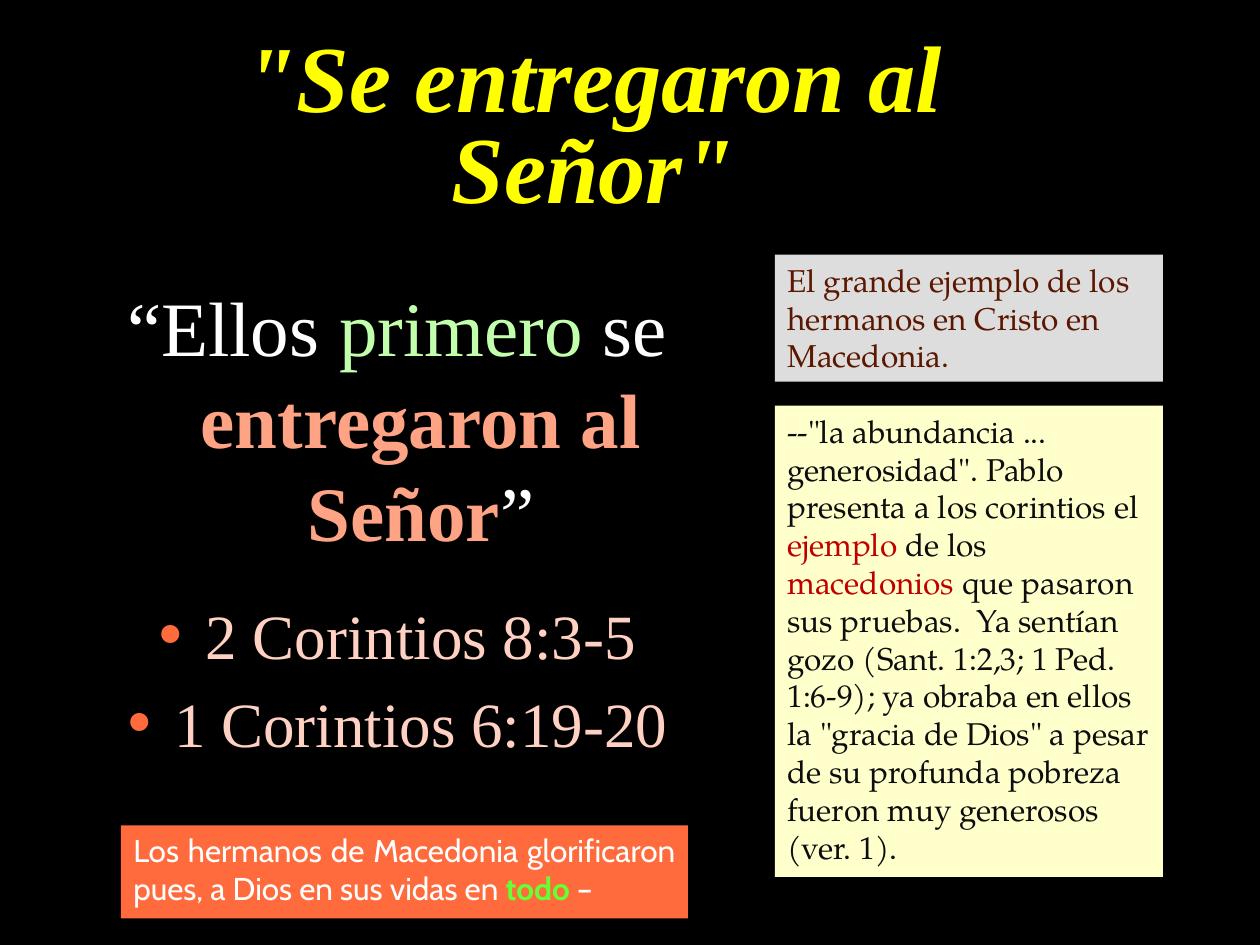
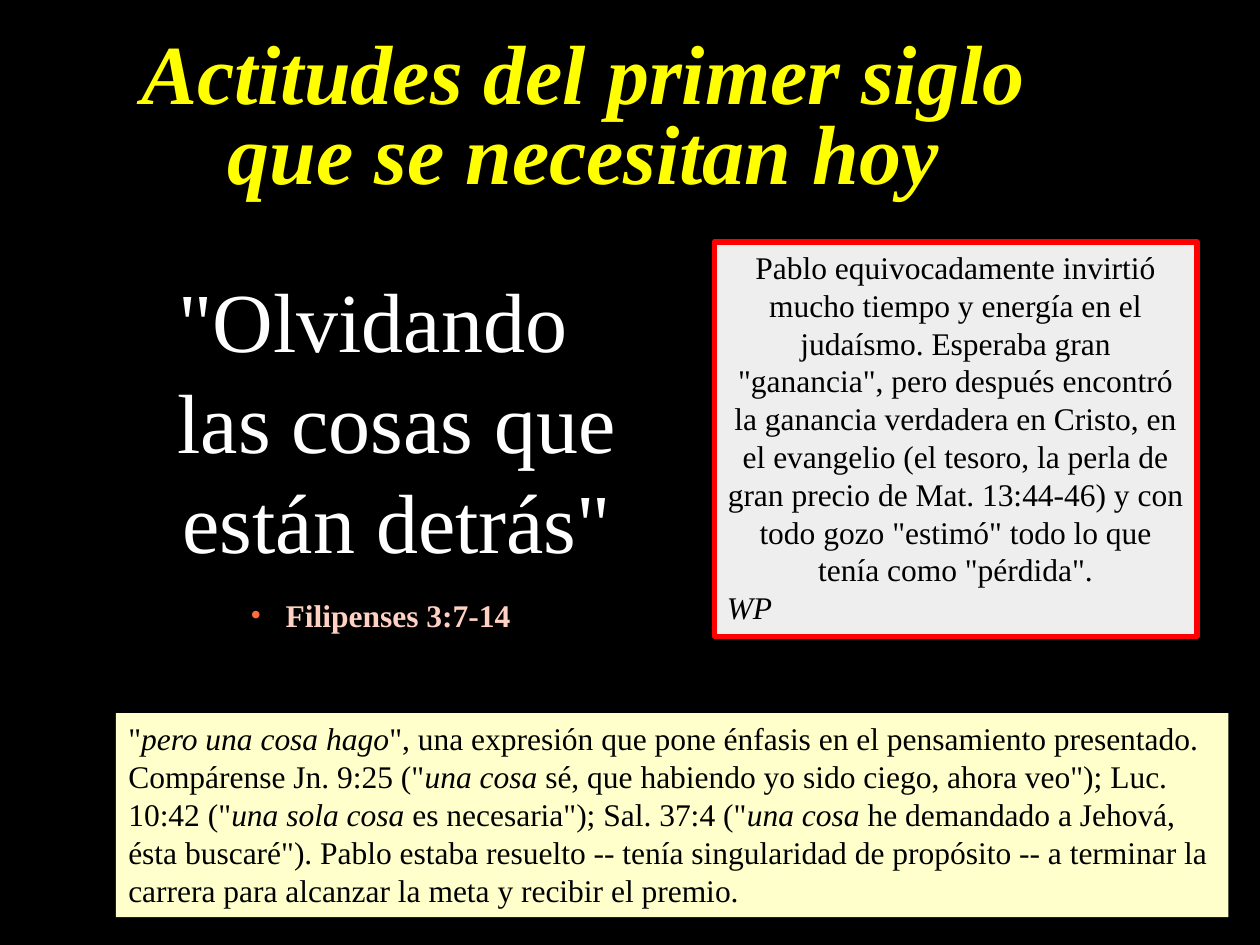
from lxml import etree
from pptx import Presentation
from pptx.dml.color import RGBColor
from pptx.enum.shapes import MSO_SHAPE
from pptx.enum.text import MSO_ANCHOR, PP_ALIGN
from pptx.oxml import parse_xml
from pptx.oxml.ns import nsdecls, qn
from pptx.util import Inches, Pt

BLACK = RGBColor(0x00, 0x00, 0x00)
WHITE = RGBColor(0xFF, 0xFF, 0xFF)
YELLOW = RGBColor(0xFF, 0xFF, 0x00)
CREAM = RGBColor(0xFF, 0xFF, 0xCC)
SILVER = RGBColor(0xDD, 0xDD, 0xDD)
PALE_GRAY = RGBColor(0xEE, 0xEE, 0xEE)
ORANGE = RGBColor(0xFF, 0x6B, 0x3C)
SALMON = RGBColor(0xFF, 0xA3, 0x85)
PINK = RGBColor(0xFF, 0xD1, 0xC2)
MINT = RGBColor(0xC2, 0xFF, 0xAD)
GREEN = RGBColor(0x66, 0xFF, 0x33)
BROWN = RGBColor(0x5C, 0x17, 0x00)
INK = RGBColor(0x0D, 0x0D, 0x0D)
DARK_RED = RGBColor(0xC0, 0x00, 0x00)
RED = RGBColor(0xFF, 0x00, 0x00)

SERIF, PAGELLA, CABIN = "Times New Roman", "TeX Gyre Pagella", "Cabin"
LEFT, CENTER, JUSTIFY = PP_ALIGN.LEFT, PP_ALIGN.CENTER, PP_ALIGN.JUSTIFY


def add_text(s, box, paragraphs, size, color, font=SERIF, align=LEFT, fill=None):
    """Add a text box, or a filled rectangle; each run is (text, color, style), style from 'b' and 'i'."""
    place = [Inches(n) for n in box]
    if fill is None:
        sp = s.shapes.add_textbox(*place)
    else:
        sp = s.shapes.add_shape(MSO_SHAPE.RECTANGLE, *place)
        sp.shadow.inherit = False
        sp.fill.solid()
        sp.fill.fore_color.rgb = fill
        sp.line.fill.background()
    tf = sp.text_frame
    tf.word_wrap = True
    tf.vertical_anchor = MSO_ANCHOR.TOP
    for i, runs in enumerate(paragraphs):
        p = tf.paragraphs[0] if i == 0 else tf.add_paragraph()
        p.alignment = align
        for text, run_color, style in runs:
            r = p.add_run()
            r.text = text
            r.font.name = font
            r.font.size = Pt(size)
            r.font.color.rgb = run_color or color
            r.font.bold = "b" in style
            r.font.italic = "i" in style
    return sp


def indent(p, hang, bullet_percent=None):
    pPr = p._p.get_or_add_pPr()
    pPr.set("marL", str(Inches(hang)))
    pPr.set("indent", str(-Inches(hang)))
    if bullet_percent:
        clr = etree.SubElement(pPr, qn("a:buClr"))
        etree.SubElement(clr, qn("a:srgbClr"), val=str(ORANGE))
        etree.SubElement(pPr, qn("a:buSzPct"), val=str(bullet_percent * 1000))
        etree.SubElement(pPr, qn("a:buFont"), typeface=SERIF)
        etree.SubElement(pPr, qn("a:buChar"), char="•")
    else:
        etree.SubElement(pPr, qn("a:buNone"))


prs = Presentation()
prs.slide_width, prs.slide_height = Inches(10), Inches(7.5)

# Background and title of each slide
titles = [
    ("\"Se entregaron al Señor\"", (0.92, 0.25, 7.58, 1.58), 54),
    ("Actitudes del primer siglo que se necesitan hoy", (0.92, 0.33, 7.42, 1.25), 48),
]
for title, box, size in titles:
    s = prs.slides.add_slide(prs.slide_layouts[6])
    s.background.fill.solid()
    s.background.fill.fore_color.rgb = BLACK
    tf = add_text(s, box, [[(title, None, "bi")]], size, YELLOW, align=CENTER).text_frame
    tf.vertical_anchor = MSO_ANCHOR.MIDDLE
    tf.paragraphs[0].line_spacing = 0.8
surrender, forgetting = prs.slides

# Slide 1: verse and references
verse = [
    [("“Ellos ", None, ""), ("primero ", MINT, ""), ("se ", None, ""),
     ("entregaron al Señor", SALMON, "b"), ("”", None, "")],
    [("2 Corintios 8:3-5", PINK, "")],
    [("1 Corintios 6:19-20", PINK, "")],
]
sp = add_text(surrender, (0.9, 2.17, 4.5, 4.42), verse, 44, WHITE, align=CENTER)
quote, *references = sp.text_frame.paragraphs
indent(quote, 0.38)
for p, gap in zip(references, (22.6, 7.2)):
    p.space_before = Pt(gap)
    indent(p, 0.38, 120)
    p.runs[0].font.size = Pt(36)

# Slide 1: notes on the Macedonians
add_text(surrender, (6.15, 2.02, 3.08, 1.01),
         [[("El grande ejemplo de los hermanos en Cristo en Macedonia.", None, "")]],
         18, BROWN, PAGELLA, fill=SILVER)
example = [
    ("--\"la abundancia ... generosidad\". Pablo presenta a los corintios el ", None, ""),
    ("ejemplo", DARK_RED, ""),
    (" de los ", None, ""),
    ("macedonios", DARK_RED, ""),
    (" que pasaron sus pruebas.  Ya sentían gozo (Sant. 1:2,3; 1 Ped. 1:6-9); "
     "ya obraba en ellos la \"gracia de Dios\" a pesar de su profunda pobreza "
     "fueron muy generosos (ver. 1).", None, ""),
]
add_text(surrender, (6.15, 3.22, 3.08, 3.74), [example], 18, INK, PAGELLA, fill=CREAM)
glory = [
    ("Los hermanos de Macedonia glorificaron pues, a Dios en sus vidas en ", None, ""),
    ("todo ", GREEN, "b"),
    ("–", None, ""),
]
sp = add_text(surrender, (0.96, 6.55, 4.5, 0.74), [glory], 18, WHITE, CABIN, JUSTIFY, ORANGE)
for r in sp.text_frame.paragraphs[0].runs:
    shadow = parse_xml(
        f'<a:effectLst {nsdecls("a")}><a:outerShdw blurRad="38100" dist="38100" dir="2700000">'
        '<a:srgbClr val="000000"><a:alpha val="43000"/></a:srgbClr></a:outerShdw></a:effectLst>')
    r._r.rPr.find(qn("a:solidFill")).addnext(shadow)

# Slide 2: verse and reference
sp = add_text(forgetting, (0.92, 2.08, 4.08, 2.67),
              [[("\"Olvidando las cosas que están detrás\"", None, "")]], 48, WHITE, align=CENTER)
indent(sp.text_frame.paragraphs[0], 0.38)
sp = add_text(forgetting, (1.37, 4.68, 3.3, 0.82),
              [[("Filipenses 3:7-14", None, "b")]], 18, PINK, align=CENTER)
indent(sp.text_frame.paragraphs[0], 0.28, 100)

# Slide 2: framed comment and closing note
gain = [
    [("Pablo equivocadamente invirtió mucho tiempo y energía en el judaísmo. Esperaba gran "
      "\"ganancia\", pero después encontró la ganancia verdadera en Cristo, en el evangelio "
      "(el tesoro, la perla de gran precio de Mat. 13:44-46) y con todo gozo \"estimó\" todo "
      "lo que tenía como \"pérdida\".", None, "")],
    [("WP", None, "i")],
]
sp = add_text(forgetting, (5.67, 1.92, 3.83, 3.13), gain, 18, BLACK, align=CENTER, fill=PALE_GRAY)
sp.line.color.rgb = RED
sp.line.width = Pt(3)
sp.text_frame.paragraphs[1].alignment = LEFT

purpose = [
    ("\"", None, ""),
    ("pero una cosa hago", None, "i"),
    ("\", una expresión que pone énfasis en el pensamiento presentado. "
     "Compárense Jn. 9:25 (\"", None, ""),
    ("una cosa", None, "i"),
    (" sé, que habiendo yo sido ciego, ahora veo\"); Luc. 10:42 (\"", None, ""),
    ("una sola cosa", None, "i"),
    (" es necesaria\"); Sal. 37:4 (\"", None, ""),
    ("una cosa", None, "i"),
    (" he demandado a Jehová, ésta buscaré\"). Pablo estaba resuelto -- tenía singularidad "
     "de propósito -- a terminar la carrera para alcanzar la meta y recibir el premio.", None, ""),
]
add_text(forgetting, (0.92, 5.66, 8.83, 1.62), [purpose], 18, BLACK, fill=CREAM)

prs.save("out.pptx")
